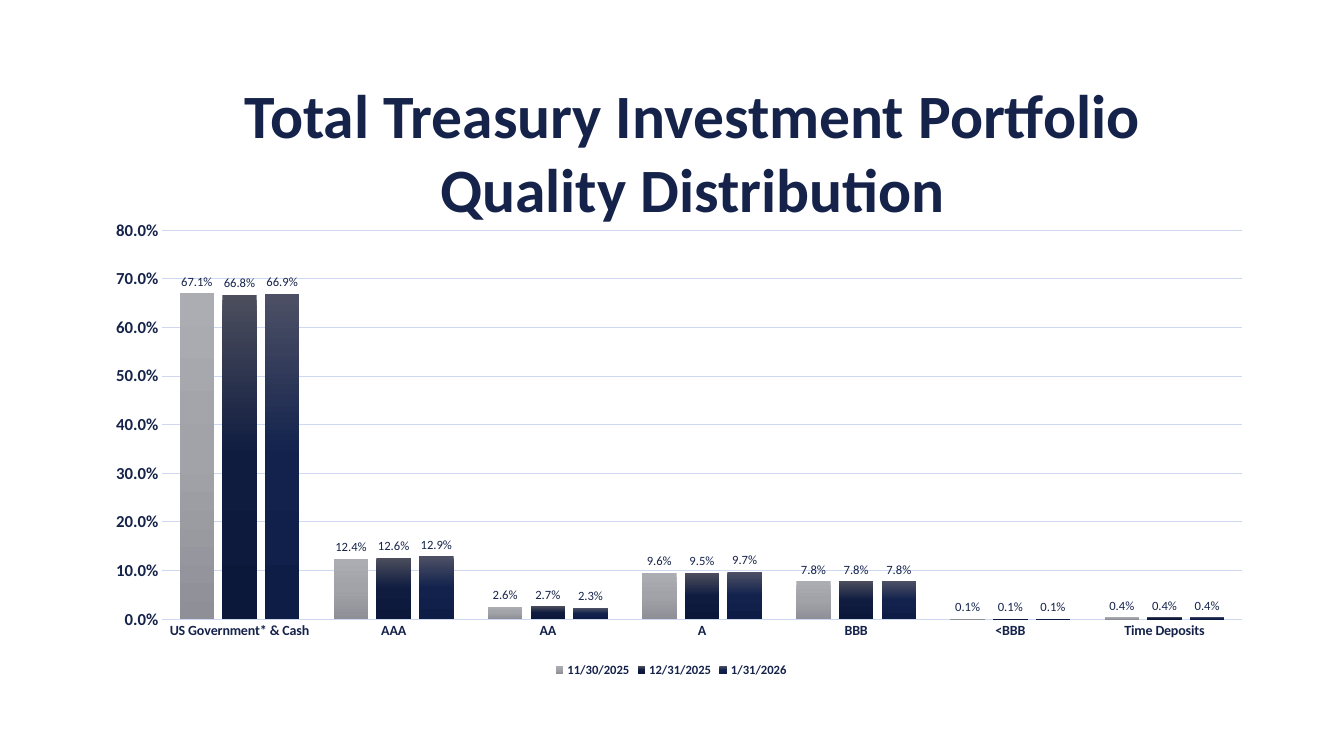
from dataclasses import dataclass

from copy import deepcopy
from lxml import etree
from pptx import Presentation
from pptx import util as u
from pptx.chart import data as chart_data
from pptx.dml.color import RGBColor
from pptx.enum import chart as charts, text
from pptx.oxml import ns


@dataclass(frozen=True)
class Theme:
    font: str = "Calibri"
    title_ink: str = "152249"
    ink: str = "15234A"
    rule: str = "CFD8F1"
    title_size: float = 44
    axis_size: float = 12
    category_size: float = 10
    small_size: float = 9
    bars: tuple = (
        ("ACADB3", "A2A3A9", "8F9097"),
        ("4C4E5D", "0F1C40", "0C183A"),
        ("4D5065", "12224D", "0E1D46"),
    )


THEME = Theme()
TITLE = "Total Treasury Investment Portfolio\vQuality Distribution"
RATINGS = ["US Government* & Cash", "AAA", "AA", "A", "BBB", "<BBB", "Time Deposits"]
SHARES = {
    "11/30/2025": (0.671, 0.124, 0.026, 0.096, 0.078, 0.001, 0.004),
    "12/31/2025": (0.668, 0.126, 0.027, 0.095, 0.078, 0.001, 0.004),
    "1/31/2026": (0.669, 0.129, 0.023, 0.097, 0.078, 0.001, 0.004),
}
PERCENT = "0.0%"


def style_font(font, size, color=THEME.ink, bold=True):
    font.name = THEME.font
    font.size = u.Pt(size)
    font.bold = bold
    font.color.rgb = RGBColor.from_string(color)


def style_line(line, width):
    line.color.rgb = RGBColor.from_string(THEME.rule)
    line.width = u.Pt(width)


def set_title(page):
    title = page.shapes.title
    title.left, title.top = u.Pt(102.2), u.Pt(51.1)
    title.width, title.height = u.Pt(785.5), u.Pt(113.8)
    frame = title.text_frame
    frame.text = TITLE
    frame.word_wrap = True
    frame.auto_size = text.MSO_AUTO_SIZE.SHAPE_TO_FIT_TEXT
    para = frame.paragraphs[0]
    para.alignment = text.PP_ALIGN.CENTER
    for span in para.runs:
        style_font(span.font, THEME.title_size, THEME.title_ink)


def fill_gradient(fill, colors):
    """Fill from top to bottom with evenly spaced colours."""
    fill.gradient()
    fill.gradient_angle = 270
    stop_list = fill._xPr.find(".//" + ns.qn("a:gsLst"))
    while len(stop_list) < len(colors):
        stop_list.append(deepcopy(stop_list[0]))
    for index, (stop, color) in enumerate(zip(fill.gradient_stops, colors)):
        stop.position = index / (len(colors) - 1)
        stop.color.rgb = RGBColor.from_string(color)


def place_plot(chart, **fractions):
    """Fix the inner plot area, in fractions of the chart frame."""
    area = chart._chartSpace.chart.plotArea
    for old in area.findall(ns.qn("c:layout")):
        area.remove(old)
    layout = etree.Element(ns.qn("c:layout"))
    manual = etree.SubElement(layout, ns.qn("c:manualLayout"))
    settings = {"layoutTarget": "inner", "xMode": "edge", "yMode": "edge", **fractions}
    for name, value in settings.items():
        etree.SubElement(manual, ns.qn("c:" + name), val=str(value))
    area.insert(0, layout)


def style_axes(chart):
    ratings, shares = chart.category_axis, chart.value_axis
    for axis, size in ((ratings, THEME.category_size), (shares, THEME.axis_size)):
        axis.major_tick_mark = axis.minor_tick_mark = charts.XL_TICK_MARK.NONE
        style_font(axis.tick_labels.font, size)
    style_line(ratings.format.line, 1)
    shares.minimum_scale, shares.maximum_scale, shares.major_unit = 0, 0.8, 0.1
    shares.tick_labels.number_format = PERCENT
    shares.tick_labels.number_format_is_linked = False
    shares.format.line.fill.background()
    style_line(shares.major_gridlines.format.line, 0.75)


def style_series(series, colors):
    fill_gradient(series.format.fill, colors)
    series.invert_if_negative = False
    labels = series.data_labels
    labels.show_value = True
    labels.number_format = PERCENT
    labels.number_format_is_linked = False
    labels.position = charts.XL_LABEL_POSITION.OUTSIDE_END
    style_font(labels.font, THEME.small_size, bold=False)


def add_quality_chart(page):
    source = chart_data.CategoryChartData(number_format=PERCENT)
    source.categories = RATINGS
    for date, values in SHARES.items():
        source.add_series(date, values)
    frame = page.shapes.add_chart(
        charts.XL_CHART_TYPE.COLUMN_CLUSTERED,
        u.Pt(65.5), u.Pt(151.2), u.Pt(828), u.Pt(335.5), source,
    )
    chart = frame.chart
    style_font(chart.font, THEME.axis_size)
    chart.has_title = False
    chart.has_legend = True
    chart.legend.position = charts.XL_LEGEND_POSITION.BOTTOM
    chart.legend.include_in_layout = False
    style_font(chart.legend.font, THEME.small_size)
    place_plot(chart, x=0.061, y=0.04, w=0.931, h=0.828)
    style_axes(chart)
    plot = chart.plots[0]
    plot.gap_width, plot.overlap = 100, -24
    plot.vary_by_categories = False
    for series, colors in zip(plot.series, THEME.bars):
        style_series(series, colors)


def main():
    deck = Presentation()
    deck.slide_width, deck.slide_height = u.Pt(960), u.Pt(540)
    page = deck.slides.add_slide(deck.slide_layouts.get_by_name("Title Only"))
    set_title(page)
    add_quality_chart(page)
    deck.save("out.pptx")


if __name__ == "__main__":
    main()
